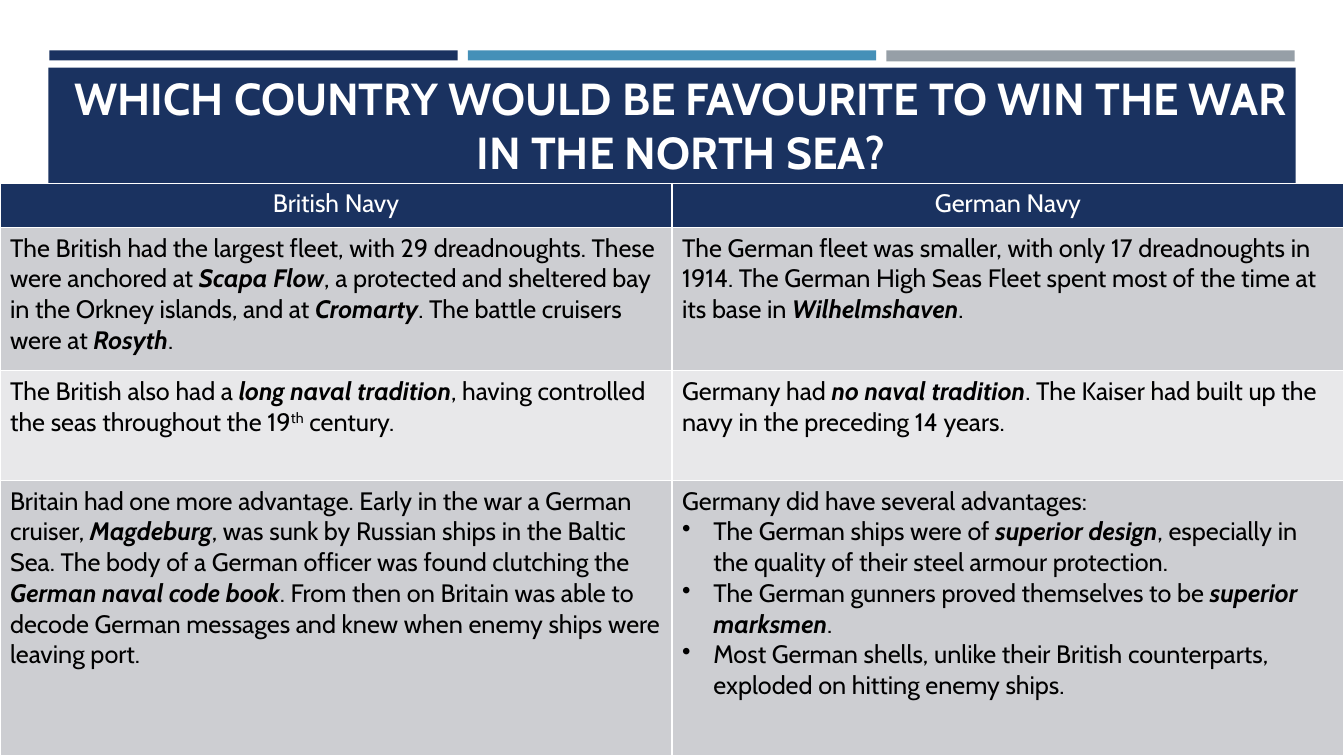
from dataclasses import dataclass

from lxml.etree import SubElement
from pptx import Presentation
from pptx.dml.color import RGBColor
from pptx.enum.shapes import MSO_SHAPE
from pptx.enum.text import MSO_ANCHOR, PP_ALIGN
from pptx.oxml.ns import qn
from pptx.util import Inches, Pt

COLORS = {
    "navy": "1A3260",
    "blue": "4590B8",
    "grey": "969FA7",
    "dark_band": "CDCED2",
    "light_band": "E8E8EA",
    "white": "FFFFFF",
    "black": "000000",
}
FONT = "Cabin"
TITLE = "WHICH COUNTRY WOULD BE FAVOURITE TO WIN THE WAR IN THE NORTH SEA?"
BULLET = "• "


@dataclass
class Bar:
    left: float
    top: float
    width: float
    height: float
    color: str


@dataclass
class Row:
    height: float
    fill: str
    british: list[str]
    german: list[str]
    color: str = "black"
    align: PP_ALIGN = PP_ALIGN.LEFT


BARS = [
    Bar(0.49, 0.5, 4.05, 0.1, "navy"),
    Bar(4.64, 0.5, 4.05, 0.1, "blue"),
    Bar(8.79, 0.5, 4.05, 0.11, "grey"),
    Bar(0.48, 0.67, 12.37, 1.3, "navy"),
]

# Asterisks enclose bold italic words, carets enclose superscripts
ROWS = [
    Row(0.44, "navy", ["British Navy"], ["German Navy"], "white", PP_ALIGN.CENTER),
    Row(
        1.42, "dark_band",
        ["The British had the largest fleet, with 29 dreadnoughts. These were anchored at "
         "*Scapa Flow*, a protected and sheltered bay in the Orkney islands, and at "
         "*Cromarty*. The battle cruisers were at *Rosyth*."],
        ["The German fleet was smaller, with only 17 dreadnoughts in 1914. The German High "
         "Seas Fleet spent most of the time at its base in *Wilhelmshaven*."],
    ),
    Row(
        1.09, "light_band",
        ["The British also had a *long naval tradition*, having controlled the seas "
         "throughout the 19^th^ century."],
        ["Germany had *no naval tradition*. The Kaiser had built up the navy in the "
         "preceding 14 years."],
    ),
    Row(
        2.73, "dark_band",
        ["Britain had one more advantage. Early in the war a German cruiser, *Magdeburg*, "
         "was sunk by Russian ships in the Baltic Sea. The body of a German officer was "
         "found clutching the *German naval code book*. From then on Britain was able to "
         "decode German messages and knew when enemy ships were leaving port."],
        ["Germany did have several advantages:",
         "• The German ships were of *superior design*, especially in the quality of their "
         "steel armour protection.",
         "• The German gunners proved themselves to be *superior marksmen*.",
         "• Most German shells, unlike their British counterparts, exploded on hitting "
         "enemy ships."],
    ),
]


def rgb(name: str) -> RGBColor:
    return RGBColor.from_string(COLORS[name])


def style_paragraph(paragraph, size: int, color: str, align: PP_ALIGN) -> None:
    paragraph.alignment = align
    paragraph.font.name = FONT
    paragraph.font.size = Pt(size)
    paragraph.font.color.rgb = rgb(color)


def add_bar(slide, bar: Bar) -> None:
    shape = slide.shapes.add_shape(
        MSO_SHAPE.RECTANGLE,
        Inches(bar.left), Inches(bar.top), Inches(bar.width), Inches(bar.height),
    )
    shape.shadow.inherit = False
    shape.fill.solid()
    shape.fill.fore_color.rgb = rgb(bar.color)
    shape.line.fill.background()


def add_title(slide) -> None:
    text_box = slide.shapes.add_textbox(Inches(0.62), Inches(0.65), Inches(12.27), Inches(1.17))
    frame = text_box.text_frame
    frame.word_wrap = True
    frame.vertical_anchor = MSO_ANCHOR.BOTTOM
    paragraph = frame.paragraphs[0]
    paragraph.text = TITLE
    style_paragraph(paragraph, 32, "white", PP_ALIGN.CENTER)
    paragraph.font.bold = True


def add_bullet(paragraph) -> None:
    properties = paragraph._p.get_or_add_pPr()
    properties.set("marL", str(Inches(0.31)))
    properties.set("indent", str(Inches(-0.31)))
    bullet = SubElement(properties, qn("a:buChar"))
    bullet.set("char", BULLET.strip())


def add_runs(paragraph, text: str) -> None:
    for part_index, part in enumerate(text.split("*")):
        for piece_index, piece in enumerate(part.split("^")):
            run = paragraph.add_run()
            run.text = piece
            run.font.bold = run.font.italic = part_index % 2 == 1
            if piece_index % 2 == 1:
                run._r.get_or_add_rPr().set("baseline", "30000")


def add_borders(cell) -> None:
    properties = cell._tc.get_or_add_tcPr()
    for side in ("lnL", "lnR", "lnT", "lnB"):
        line = SubElement(properties, qn(f"a:{side}"), w=str(Pt(1)))
        fill = SubElement(line, qn("a:solidFill"))
        SubElement(fill, qn("a:srgbClr"), val=COLORS["white"])


def fill_cell(cell, row: Row, texts: list[str]) -> None:
    add_borders(cell)
    cell.fill.solid()
    cell.fill.fore_color.rgb = rgb(row.fill)
    frame = cell.text_frame
    for index, text in enumerate(texts):
        paragraph = frame.add_paragraph() if index else frame.paragraphs[0]
        if text.startswith(BULLET):
            add_bullet(paragraph)
        add_runs(paragraph, text.removeprefix(BULLET))
        style_paragraph(paragraph, 18, row.color, row.align)


def add_navy_table(slide) -> None:
    height = sum(row.height for row in ROWS)
    table = slide.shapes.add_table(
        len(ROWS), 2, Inches(0), Inches(1.82), Inches(13.33), Inches(height)
    ).table
    for index, row in enumerate(ROWS):
        table.rows[index].height = Inches(row.height)
        fill_cell(table.cell(index, 0), row, row.british)
        fill_cell(table.cell(index, 1), row, row.german)


def main() -> None:
    presentation = Presentation()
    presentation.slide_width = Inches(13.33)
    presentation.slide_height = Inches(7.5)
    slide = presentation.slides.add_slide(presentation.slide_layouts[6])

    # Header bars and title
    for bar in BARS:
        add_bar(slide, bar)
    add_title(slide)

    # Comparison of the two navies
    add_navy_table(slide)
    presentation.save("out.pptx")


if __name__ == "__main__":
    main()
